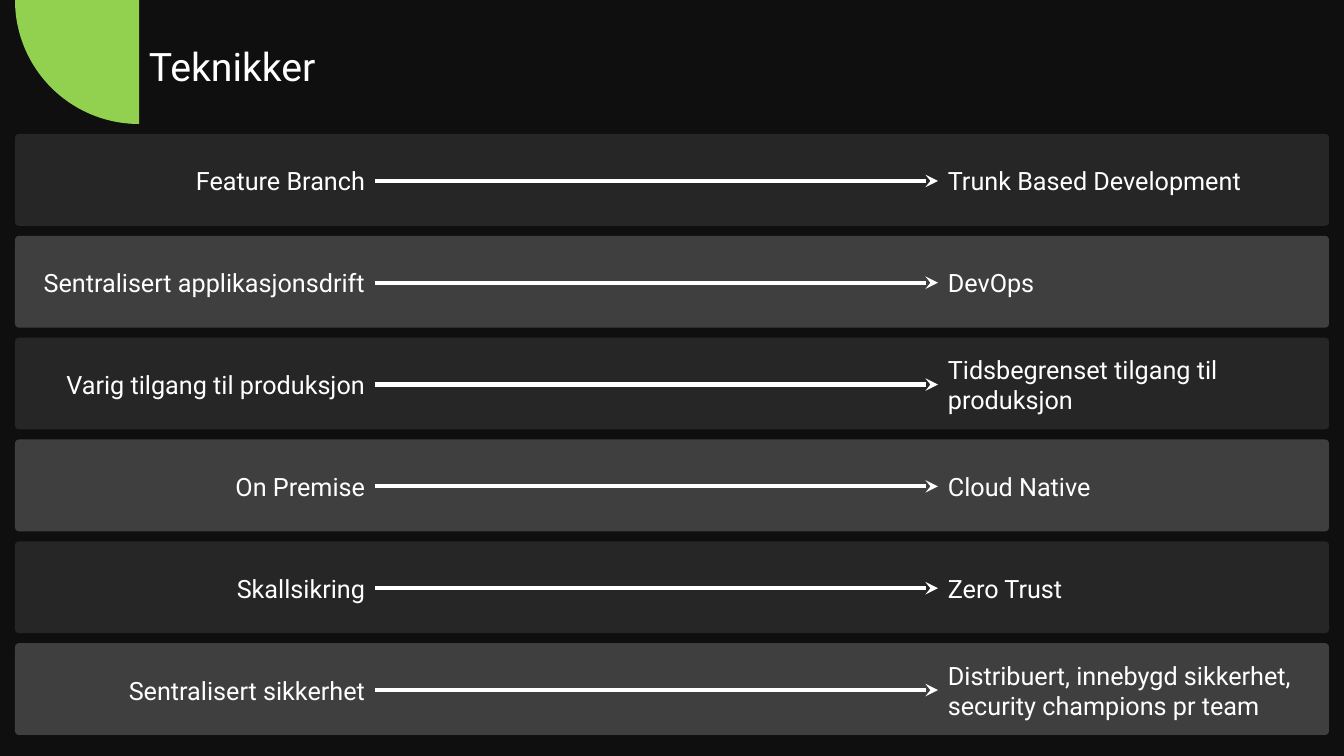
import math

import pptx
import pptx.dml.color
import pptx.enum.shapes
import pptx.enum.text
import pptx.oxml
import pptx.oxml.ns
import pptx.util

RGBColor = pptx.dml.color.RGBColor
BACKGROUND = RGBColor(0x0F, 0x0F, 0x0F)
DARK_ROW = RGBColor(0x26, 0x26, 0x26)
LIGHT_ROW = RGBColor(0x3F, 0x3F, 0x3F)
WHITE = RGBColor(0xFF, 0xFF, 0xFF)
GREEN = RGBColor(0x92, 0xD0, 0x50)

EMU_PER_PX = 914400 / 100.8
FONT = "Roboto"
ALIGN = pptx.enum.text.PP_ALIGN
ANCHOR = pptx.enum.text.MSO_ANCHOR

TECHNIQUES = [
    ("Feature Branch", "Trunk Based Development"),
    ("Sentralisert applikasjonsdrift", "DevOps"),
    ("Varig tilgang til produksjon", "Tidsbegrenset tilgang til produksjon"),
    ("On Premise", "Cloud Native"),
    ("Skallsikring", "Zero Trust"),
    ("Sentralisert sikkerhet",
     "Distribuert, innebygd sikkerhet, security champions pr team"),
]


def px(length):
    return pptx.util.Emu(round(length * EMU_PER_PX))


def paint(shape, color):
    shape.shadow.inherit = False
    shape.fill.solid()
    shape.fill.fore_color.rgb = color
    shape.line.fill.background()


def add_text(shapes, box, text, size, align=ALIGN.LEFT, anchor=ANCHOR.MIDDLE):
    frame = shapes.add_textbox(*map(px, box)).text_frame
    frame.word_wrap = True
    frame.vertical_anchor = anchor
    para = frame.paragraphs[0]
    para.alignment = align
    span = para.add_run()
    span.text = text
    span.font.name = FONT
    span.font.size = pptx.util.Pt(size)
    span.font.color.rgb = WHITE


def add_arrow(shapes, start, end, middle):
    arrow = shapes.add_connector(
        pptx.enum.shapes.MSO_CONNECTOR.STRAIGHT,
        px(start), px(middle), px(end), px(middle))
    arrow.line.color.rgb = WHITE
    arrow.line.width = pptx.util.Pt(3)
    # Arrowhead, and no shadow
    qn = pptx.oxml.ns.qn
    head = arrow.line._get_or_add_ln().makeelement(qn("a:tailEnd"), {"type": "stealth"})
    arrow.line._get_or_add_ln().append(head)
    properties = arrow._element.spPr
    properties.append(properties.makeelement(qn("a:effectLst"), {}))


def add_header(page, left, top, radius):
    # Quarter disc hanging from the top edge
    right = left + radius
    angles = [math.pi / 2 * step / 60 for step in range(61)]
    arc = [(px(right - radius * math.cos(angle)), px(top + radius * math.sin(angle)))
           for angle in angles]
    outline = page.shapes.build_freeform(px(right), px(top), scale=1.0)
    outline.add_line_segments(arc, close=True)
    paint(outline.convert_to_shape(), GREEN)
    # Title
    add_text(page.shapes, (right, top + 37, 212, 57), "Teknikker", 28,
             anchor=ANCHOR.TOP)


def add_row(page, box, color, before, after):
    left, top, width, height = box
    panel = page.shapes.add_shape(
        pptx.enum.shapes.MSO_SHAPE.ROUNDED_RECTANGLE, *map(px, box))
    panel.adjustments[0] = 0.043
    paint(panel, color)

    # Old technique, arrow, new technique
    arrow_start, arrow_end = left + 360, left + 923
    middle = top + height / 2 + 1
    label_height = 40
    label_top = middle - label_height / 2
    group = page.shapes.add_group_shape().shapes
    add_arrow(group, arrow_start, arrow_end, middle)
    add_text(group, (left, label_top, arrow_start - left, label_height),
             before, 18, ALIGN.RIGHT)
    add_text(group, (arrow_end, label_top, left + width - arrow_end, label_height),
             after, 18)


def add_rows(page, left, top, width, height, gap):
    row_height = (height + gap) / len(TECHNIQUES) - gap
    for index, (before, after) in enumerate(TECHNIQUES):
        row_top = top + index * (row_height + gap)
        color = LIGHT_ROW if index % 2 else DARK_ROW
        add_row(page, (left, row_top, width, row_height), color, before, after)


def main():
    deck = pptx.Presentation()
    deck.slide_width, deck.slide_height = px(1344), px(756)
    page = deck.slides.add_slide(deck.slide_layouts[6])
    page.background.fill.solid()
    page.background.fill.fore_color.rgb = BACKGROUND
    add_rows(page, left=15, top=134, width=1314, height=601, gap=10)
    add_header(page, left=15, top=0, radius=124)
    deck.save("out.pptx")


if __name__ == "__main__":
    main()
